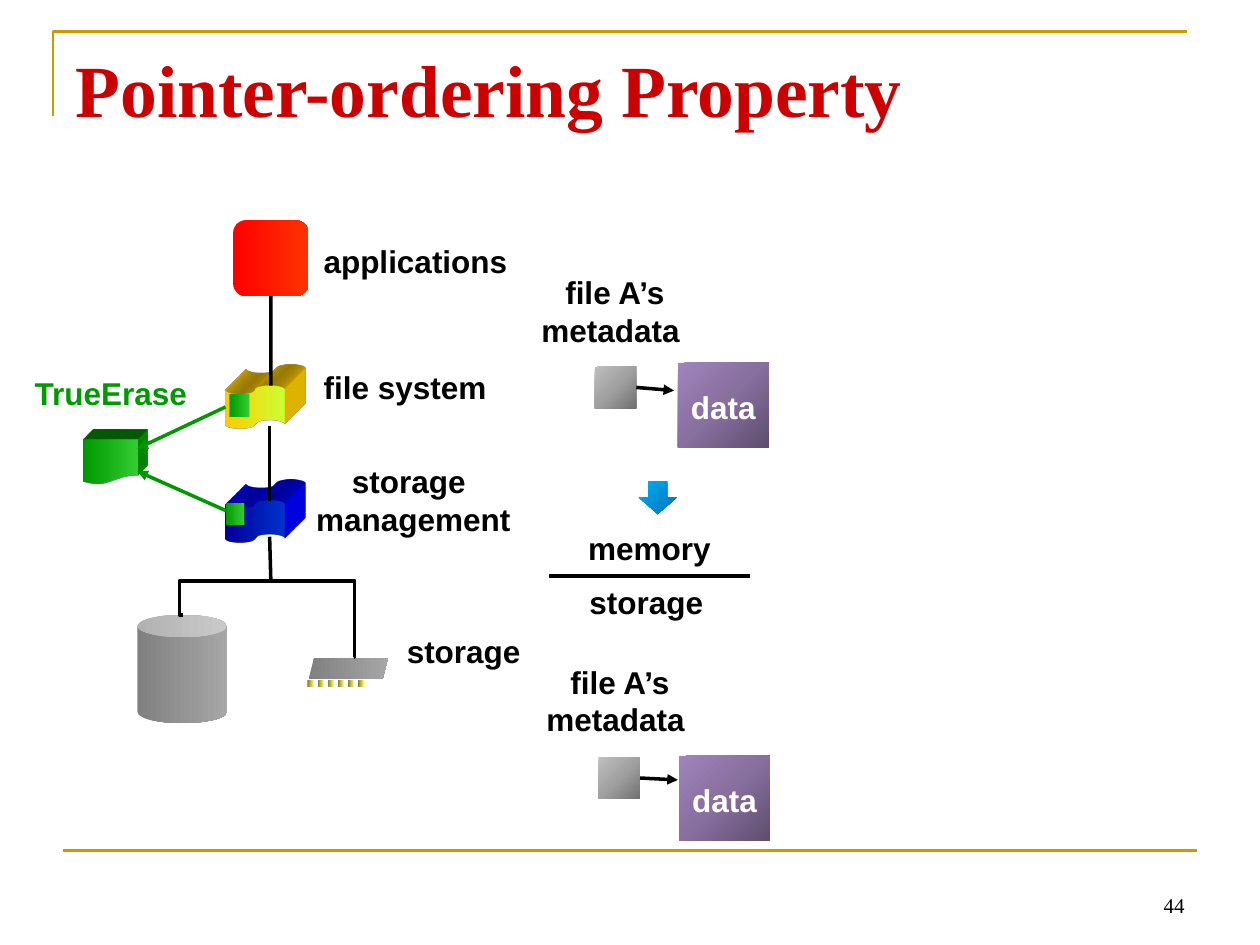
"""Build the slide on the pointer-ordering property of a storage stack."""
import lxml.etree
import pptx
import pptx.dml.color
import pptx.enum.shapes
import pptx.enum.text
import pptx.oxml
import pptx.oxml.ns
import pptx.util

SHAPE = pptx.enum.shapes.MSO_SHAPE
CONNECTOR = pptx.enum.shapes.MSO_CONNECTOR
ALIGN = pptx.enum.text.PP_ALIGN
ANCHOR = pptx.enum.text.MSO_ANCHOR
NAMESPACE = pptx.oxml.ns.nsdecls("a")

THEME = {
    "rule": "CC9900", "ink": "000000", "erase": "009900",
    "title": {"size": 42, "name": "Times New Roman", "bold": True, "color": "CC0000"},
    "number": {"size": 12, "name": "Times New Roman", "color": "000000"},
    "label": {"size": 18, "name": "Arial", "bold": True, "color": "000000"},
    "red": ("FF0000", "FF3300"), "gray": ("808080", "A6A6A6"),
    "gold": ("76762F", "FFFF66"), "blue": ("000099", "0033CC"),
    "yellow": ("FFCC00", "CCFF33"), "green": ("009900", "33CC33"),
    "metadata": ("717171", "A1A1A1", "BFBFBF"),
    "data": ("5F4E6F", "876F9E", "A084BB"), "arrow": ("0070C0", "00B0F0"),
}
CORNER_SHADED = ("metadata", "data", "arrow")

TITLE = "Pointer-ordering Property"
PAGE_NUMBER = "44"
FILE_STATES = [
    {"square": (4.72, 2.91), "data": (5.38, 2.88), "label": (4.19, 2.12), "tip": (5.35, 3.1)},
    {"square": (4.75, 6.01), "data": (5.39, 6), "label": (4.23, 5.21), "tip": (5.38, 6.19)},
]
PIN_LEFT, PIN_STEP, PIN_COUNT = 2.44, 0.08, 6
STACK_SHAPES = [
    (SHAPE.CAN, (1.09, 4.88, 0.71, 0.86), "gray", None),
    (SHAPE.PARALLELOGRAM, (2.45, 5.22, 0.63, 0.17), "gray", None),
    *[(SHAPE.RECTANGLE, (PIN_LEFT + pin * PIN_STEP, 5.4, 0.05, 0.05), "gold", None)
      for pin in range(PIN_COUNT)],
    (SHAPE.FLOWCHART_PUNCHED_TAPE, (1.79, 3.97, 0.47, 0.34), "blue", (430200, "0000FF")),
    (SHAPE.FLOWCHART_PUNCHED_TAPE, (1.79, 3.06, 0.47, 0.34), "yellow", (430200, "FFCC00")),
    (SHAPE.FLOWCHART_DOCUMENT, (0.66, 3.49, 0.43, 0.35), "green", (201600, "009900")),
]
ERASE_MARKS = [(1.79, 3.99, 0.15, 0.18), (1.82, 3.13, 0.16, 0.18)]
LABELS = [
    (["applications"], (2.47, 1.87, 2.1, 0.51), ALIGN.LEFT, "ink"),
    (["file system"], (2.47, 2.87, 1.89, 0.51), ALIGN.LEFT, "ink"),
    (["storage ", "management"], (2.4, 3.62, 1.76, 0.71), ALIGN.CENTER, "ink"),
    (["storage"], (3.13, 4.97, 1.49, 0.51), ALIGN.LEFT, "ink"),
    (["TrueErase"], (0.17, 2.92, 1.42, 0.4), ALIGN.CENTER, "erase"),
    (["memory"], (4.57, 4.15, 1.18, 0.4), ALIGN.LEFT, "ink"),
    (["storage"], (4.58, 4.58, 1.11, 0.4), ALIGN.LEFT, "ink"),
]
STACK_LINES = [((2.14, 3.38), (2.14, 3.98)), ((2.14, 4.26), (2.15, 4.61))]
STORAGE_BRANCHES = [((2.81, 5.22), 100900), ((1.45, 4.88), 103500)]
ERASE_ARROWS = [((1.79, 3.23), (1.09, 3.56)), ((1.81, 4.06), (1.09, 3.74))]


def lengths(values):
    return [pptx.util.Cm(value * 2.54) for value in values]


def rgb(value):
    return pptx.dml.color.RGBColor.from_string(value)


def style_font(font, style):
    for name, value in style.items():
        if name == "color":
            font.color.rgb = rgb(value)
        else:
            setattr(font, name, pptx.util.Pt(value) if name == "size" else value)


def write(box, lines, style, align, **frame_format):
    frame = box.text_frame
    frame.text = "\n".join(lines)
    for name, value in frame_format.items():
        setattr(frame, name, value)
    for para in frame.paragraphs:
        para.alignment = align
        for span in para.runs:
            style_font(span.font, style)


def add_text(page, lines, place, style, align, **frame_format):
    box = page.shapes.add_textbox(*lengths(place))
    write(box, lines, style, align, **frame_format)
    return box


def add_label(page, lines, place, align, color="000000"):
    style = {**THEME["label"], "color": color}
    return add_text(page, lines, place, style, align, word_wrap=False)


def add_block(page, kind, place, fill, depth=None):
    shape = page.shapes.add_shape(kind, *lengths(place))
    shape.line.fill.background()
    shape.shadow.inherit = False
    shape.fill.background()
    colors = THEME[fill]
    stops = "".join(
        f'<a:gs pos="{100000 * index // (len(colors) - 1)}"><a:srgbClr val="{color}"/></a:gs>'
        for index, color in enumerate(colors))
    if fill in CORNER_SHADED:
        shade = '<a:path path="circle"><a:fillToRect l="100000" t="100000"/></a:path>'
    else:
        shade = '<a:lin ang="0" scaled="1"/>'
    gradient = pptx.oxml.parse_xml(
        f'<a:gradFill {NAMESPACE} rotWithShape="1"><a:gsLst>{stops}</a:gsLst>{shade}</a:gradFill>')
    properties = shape.element.spPr
    properties.replace(properties.find(pptx.oxml.ns.qn("a:noFill")), gradient)
    if depth:
        height, color = depth
        properties.append(pptx.oxml.parse_xml(
            f'<a:scene3d {NAMESPACE}><a:camera prst="legacyObliqueTopRight"/>'
            '<a:lightRig rig="legacyFlat3" dir="b"/></a:scene3d>'))
        properties.append(pptx.oxml.parse_xml(
            f'<a:sp3d {NAMESPACE} extrusionH="{height}" prstMaterial="legacyMatte">'
            f'<a:extrusionClr><a:srgbClr val="{color}"/></a:extrusionClr></a:sp3d>'))
    return shape


def add_line(page, start, end, color="ink", width=2, arrow=False, bend=None):
    kind = CONNECTOR.ELBOW if bend else CONNECTOR.STRAIGHT
    line = page.shapes.add_connector(kind, *lengths(start + end))
    line.line.color.rgb = rgb(THEME[color])
    line.line.width = pptx.util.Pt(width)
    properties = line.element.spPr
    lxml.etree.SubElement(properties, pptx.oxml.ns.qn("a:effectLst"))
    if arrow:
        outline = properties.find(pptx.oxml.ns.qn("a:ln"))
        lxml.etree.SubElement(outline, pptx.oxml.ns.qn("a:tailEnd"), type="triangle")
    if bend:
        guides = properties.find(".//" + pptx.oxml.ns.qn("a:avLst"))
        lxml.etree.SubElement(
            guides, pptx.oxml.ns.qn("a:gd"), name="adj1", fmla=f"val {bend}")
    return line


def add_frame(page):
    left, bottom, top, right = lengths((0.42, 0.92, 0.25, 9.42))
    builder = page.shapes.build_freeform(left, bottom)
    builder.add_line_segments([(left, top), (right, top)], close=False)
    bracket = builder.convert_to_shape()
    bracket.fill.background()
    bracket.shadow.inherit = False
    bracket.line.color.rgb = rgb(THEME["rule"])
    bracket.line.width = pptx.util.Pt(1.5)
    add_line(page, (0.5, 6.75), (9.5, 6.75), "rule", 1.5)
    title = page.shapes.title
    title.left, title.top, title.width, title.height = lengths((0.5, 0.3, 9, 1.5))
    write(title, [TITLE], THEME["title"], ALIGN.LEFT, vertical_anchor=ANCHOR.TOP)
    add_text(page, [PAGE_NUMBER], (7.17, 6.83, 2.33, 0.5), THEME["number"], ALIGN.RIGHT,
             word_wrap=True, vertical_anchor=ANCHOR.BOTTOM)


def add_file_state(page, state):
    left, top = state["data"]
    add_block(page, SHAPE.RECTANGLE, (left, top, 0.72, 0.67), "data")
    add_label(page, ["data"], (left, top + 0.15, 0.72, 0.4), ALIGN.CENTER, "FFFFFF")
    square = add_block(page, SHAPE.RECTANGLE, state["square"] + (0.33, 0.33), "metadata")
    add_label(page, ["file A’s", "metadata "], state["label"] + (1.38, 0.71), ALIGN.CENTER)
    tip = state["tip"]
    add_line(page, (tip[0] - 0.3, tip[1]), tip, arrow=True).begin_connect(square, 3)


def add_stack(page):
    applications = add_block(page, SHAPE.ROUNDED_RECTANGLE, (1.85, 1.75, 0.6, 0.6), "red")
    for kind, place, fill, depth in STACK_SHAPES:
        add_block(page, kind, place, fill, depth)
    add_line(page, (2.15, 2.35), (2.15, 3.06)).begin_connect(applications, 2)
    for start, end in STACK_LINES:
        add_line(page, start, end)
    for end, bend in STORAGE_BRANCHES:
        add_line(page, (2.15, 4.61), end, bend=bend)
    for start, end in ERASE_ARROWS:
        add_line(page, start, end, "erase", arrow=True)
    for place in ERASE_MARKS:
        add_block(page, SHAPE.RECTANGLE, place, "green")


def main():
    deck = pptx.Presentation()
    deck.slide_width, deck.slide_height = lengths((10, 7.5))
    page = deck.slides.add_slide(deck.slide_layouts[5])
    add_frame(page)
    for state in FILE_STATES:
        add_file_state(page, state)
    add_block(page, SHAPE.RIGHT_ARROW, (5.09, 3.8, 0.26, 0.3), "arrow").rotation = 90
    add_stack(page)
    add_line(page, (4.36, 4.57), (5.95, 4.57), width=2.25)
    for lines, place, align, color in LABELS:
        add_label(page, lines, place, align, THEME[color])
    deck.save("out.pptx")


if __name__ == "__main__":
    main()
